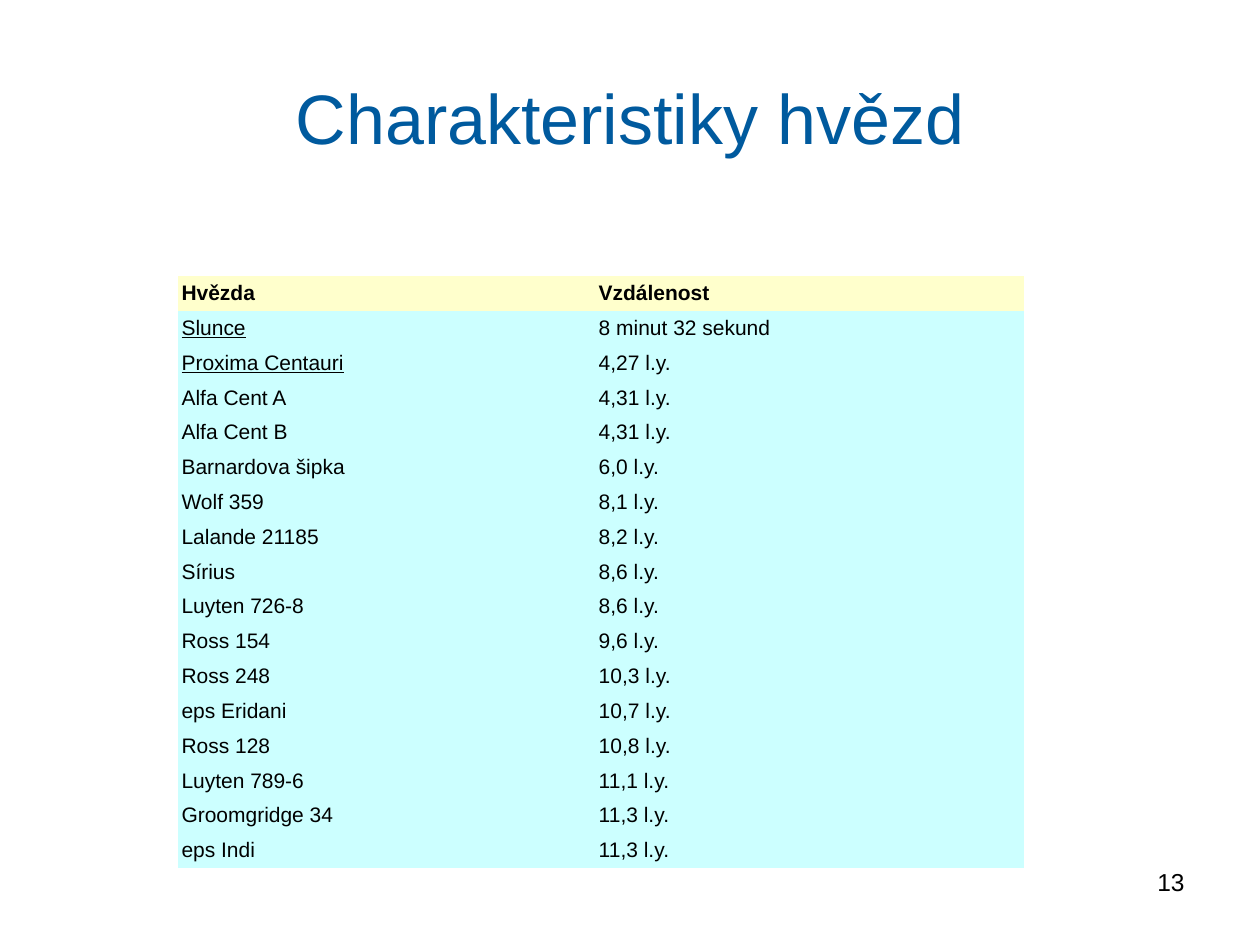
from pptx import Presentation
from pptx.dml.color import RGBColor
from pptx.enum.text import MSO_ANCHOR, PP_ALIGN
from pptx.oxml.ns import qn
from pptx.util import Cm, Pt

MIDDLE, TOP = MSO_ANCHOR.MIDDLE, MSO_ANCHOR.TOP
LEFT, CENTER, RIGHT = PP_ALIGN.LEFT, PP_ALIGN.CENTER, PP_ALIGN.RIGHT
NO_GRID_STYLE = "{2D5ABB26-0587-4C30-8999-92F81FD0307C}"
FONT = "Arial"
COLORS = {
    "title": "005A9E",
    "text": "000000",
    "header": "FFFFCC",
    "body": "CCFFFF",
}

TITLE = "Charakteristiky hvězd"
PAGE_NUMBER = "13"
HEADER = ("Hvězda", "Vzdálenost")
STARS = [
    ("Slunce", "8 minut 32 sekund"),
    ("Proxima Centauri", "4,27 l.y."),
    ("Alfa Cent A", "4,31 l.y."),
    ("Alfa Cent B", "4,31 l.y."),
    ("Barnardova šipka", "6,0 l.y."),
    ("Wolf 359", "8,1 l.y."),
    ("Lalande 21185", "8,2 l.y."),
    ("Sírius", "8,6 l.y."),
    ("Luyten 726-8", "8,6 l.y."),
    ("Ross 154", "9,6 l.y."),
    ("Ross 248", "10,3 l.y."),
    ("eps Eridani", "10,7 l.y."),
    ("Ross 128", "10,8 l.y."),
    ("Luyten 789-6", "11,1 l.y."),
    ("Groomgridge 34", "11,3 l.y."),
    ("eps Indi", "11,3 l.y."),
]
UNDERLINED = {"Slunce", "Proxima Centauri"}

COLUMN_WIDTHS = (8.41, 8.66)
TABLE_LEFT, TABLE_TOP, TABLE_HEIGHT = 3.58, 5.56, 11.94
CELL_MARGIN = Cm(0.08)


def write(frame, text, size, color, align=LEFT, bold=False, underline=False):
    frame.text = text
    paragraph = frame.paragraphs[0]
    paragraph.alignment = align
    font = paragraph.runs[0].font
    font.name, font.size = FONT, Pt(size)
    font.bold, font.underline = bold, underline
    font.color.rgb = RGBColor.from_string(COLORS[color])


def add_text(slide, box, text, size, color, align, anchor):
    frame = slide.shapes.add_textbox(*map(Cm, box)).text_frame
    frame.word_wrap = True
    frame.vertical_anchor = anchor
    write(frame, text, size, color, align)


def add_star_table(slide):
    rows = [HEADER, *STARS]
    table = slide.shapes.add_table(
        len(rows), len(HEADER), Cm(TABLE_LEFT), Cm(TABLE_TOP),
        Cm(sum(COLUMN_WIDTHS)), Cm(TABLE_HEIGHT)).table
    table.horz_banding = False
    table._tbl.tblPr.find(qn("a:tableStyleId")).text = NO_GRID_STYLE
    for column, width in zip(table.columns, COLUMN_WIDTHS):
        column.width = Cm(width)
    for r, values in enumerate(rows):
        is_header = r == 0
        table.rows[r].height = Cm(TABLE_HEIGHT / len(rows))
        for c, value in enumerate(values):
            cell = table.cell(r, c)
            cell.margin_left = cell.margin_right = CELL_MARGIN
            cell.margin_top = cell.margin_bottom = CELL_MARGIN
            cell.vertical_anchor = MIDDLE
            cell.fill.solid()
            cell.fill.fore_color.rgb = RGBColor.from_string(
                COLORS["header" if is_header else "body"])
            write(cell.text_frame, value, 12, "text",
                  bold=is_header, underline=value in UNDERLINED)


def main():
    deck = Presentation()
    deck.slide_width, deck.slide_height = Cm(25.4), Cm(19.05)
    slide = deck.slides.add_slide(deck.slide_layouts[6])
    add_text(slide, (18.21, 17.35, 5.92, 1.32), PAGE_NUMBER, 14, "text", RIGHT, TOP)
    add_text(slide, (1.27, 0.76, 22.86, 3.18), TITLE, 40, "title", CENTER, MIDDLE)
    add_star_table(slide)
    deck.save("out.pptx")


if __name__ == "__main__":
    main()
